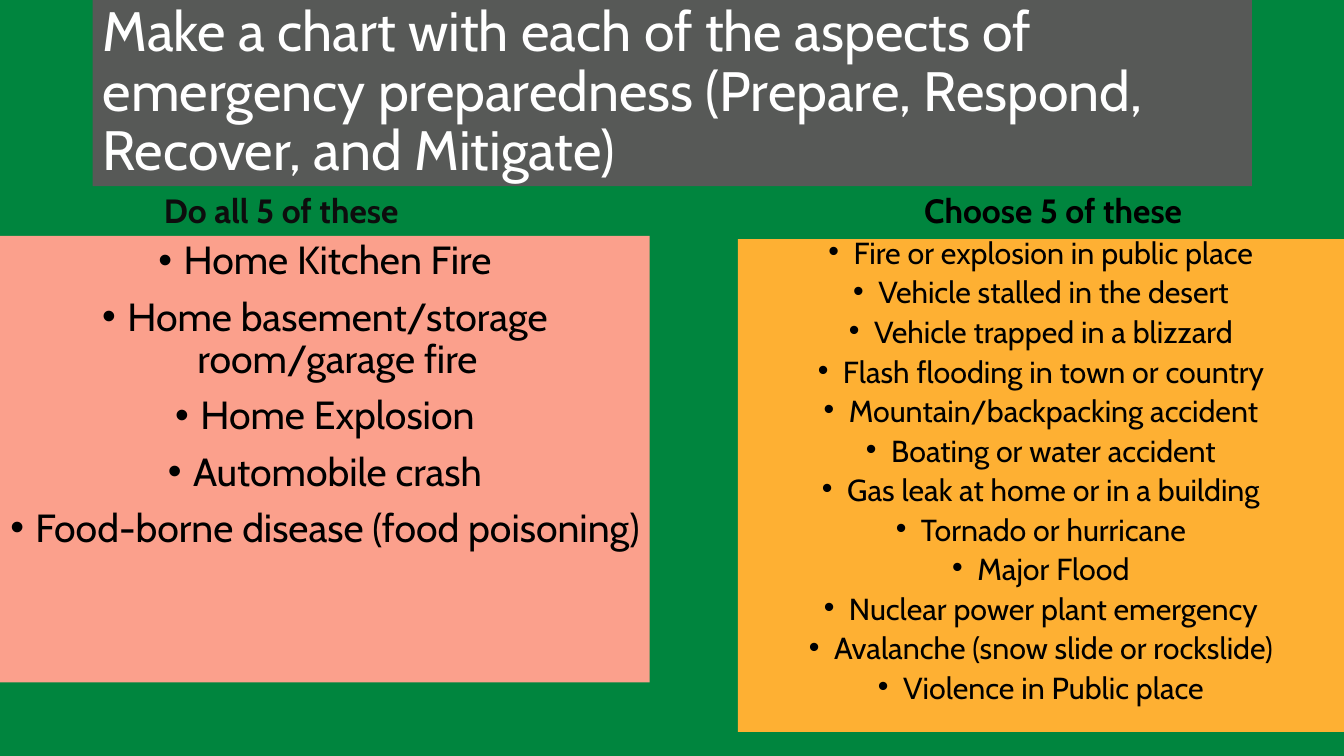
from lxml.etree import SubElement
from pptx import Presentation
from pptx.dml.color import RGBColor
from pptx.enum.shapes import MSO_SHAPE as Shape
from pptx.enum.text import MSO_ANCHOR as Anchor, PP_ALIGN as Align
from pptx.oxml.ns import qn
from pptx.util import Pt

REQUIRED = [
    "Home Kitchen Fire",
    "Home basement/storage room/garage fire",
    "Home Explosion",
    "Automobile crash",
    "Food-borne disease (food poisoning)",
]
OPTIONAL = [
    "Fire or explosion in public place",
    "Vehicle stalled in the desert",
    "Vehicle trapped in a blizzard",
    "Flash flooding in town or country",
    "Mountain/backpacking accident",
    "Boating or water accident",
    "Gas leak at home or in a building",
    "Tornado or hurricane",
    "Major Flood",
    "Nuclear power plant emergency",
    "Avalanche (snow slide or rockslide)",
    "Violence in Public place",
]


def paint(fill, color):
    """Fill an area with a solid hex colour."""
    fill.solid()
    fill.fore_color.rgb = RGBColor.from_string(color)


def add_bullet(paragraph):
    """Give a paragraph a hanging round bullet."""
    properties = paragraph._p.get_or_add_pPr()
    properties.set("marL", str(Pt(18)))
    properties.set("indent", str(-Pt(18)))
    SubElement(properties, qn("a:buFont"), typeface="Arial")
    SubElement(properties, qn("a:buChar"), char="•")


def write(frame, lines, size, color="000000", bold=False, align=Align.LEFT,
          anchor=Anchor.TOP, leading=0.9, bullets=False):
    """Write the lines as formatted paragraphs."""
    frame.word_wrap = True
    frame.vertical_anchor = anchor
    for index, line in enumerate(lines):
        paragraph = frame.add_paragraph() if index else frame.paragraphs[0]
        paragraph.text = line
        paragraph.alignment = align
        paragraph.line_spacing = leading
        paragraph.space_before = Pt(10 if index else 0)
        if bullets:
            add_bullet(paragraph)
        font = paragraph.font
        font.name = "Cabin"
        font.size = Pt(size)
        font.bold = bold
        paint(font.fill, color)


def add_panel(slide, bounds, background, lines, size, **text_format):
    """Add a filled rectangle holding text."""
    panel = slide.shapes.add_shape(Shape.RECTANGLE, *map(Pt, bounds))
    panel.shadow.inherit = False
    panel.line.fill.background()
    paint(panel.fill, background)
    write(panel.text_frame, lines, size, **text_format)


def add_heading(slide, bounds, text, color):
    """Add a bold heading above a list."""
    heading = slide.shapes.add_textbox(*map(Pt, bounds))
    write(heading.text_frame, [text], 24, color=color, bold=True, anchor=Anchor.BOTTOM)


def add_scenarios(slide, bounds, background, scenarios, size, leading):
    """Add a coloured panel with a centred bullet list."""
    add_panel(slide, bounds, background, scenarios, size,
              align=Align.CENTER, leading=leading, bullets=True)


def main():
    """Build and save the slide."""
    deck = Presentation()
    deck.slide_width, deck.slide_height = Pt(960), Pt(540)
    slide = deck.slides.add_slide(deck.slide_layouts[6])
    paint(slide.background.fill, "00853E")
    title = ("Make a chart with each of the aspects of emergency preparedness "
             "(Prepare, Respond, Recover, and Mitigate)")
    add_panel(slide, (66.25, 0, 828, 133), "575957", [title], 39.6,
              color="FFFFFF", anchor=Anchor.MIDDLE)
    add_heading(slide, (110, 132.5, 186, 36), "Do all 5 of these", "0D0D0D")
    add_scenarios(slide, (0, 168.5, 464, 319), "FBA08C", REQUIRED, 28, 0.9)
    add_heading(slide, (653, 133, 206, 35.5), "Choose 5 of these", "000000")
    add_scenarios(slide, (527, 170.75, 433, 352), "FEB033", OPTIONAL, 21.7, 0.7)
    deck.save("out.pptx")


if __name__ == "__main__":
    main()
